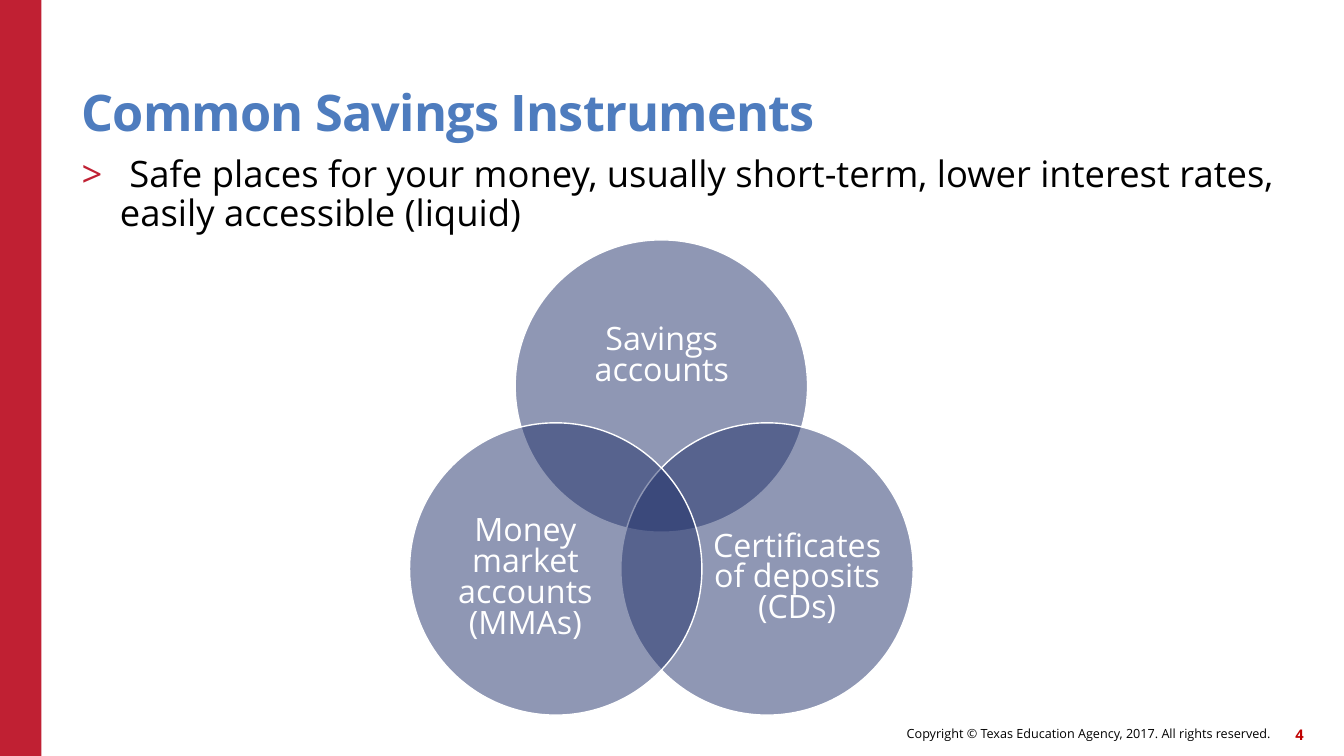
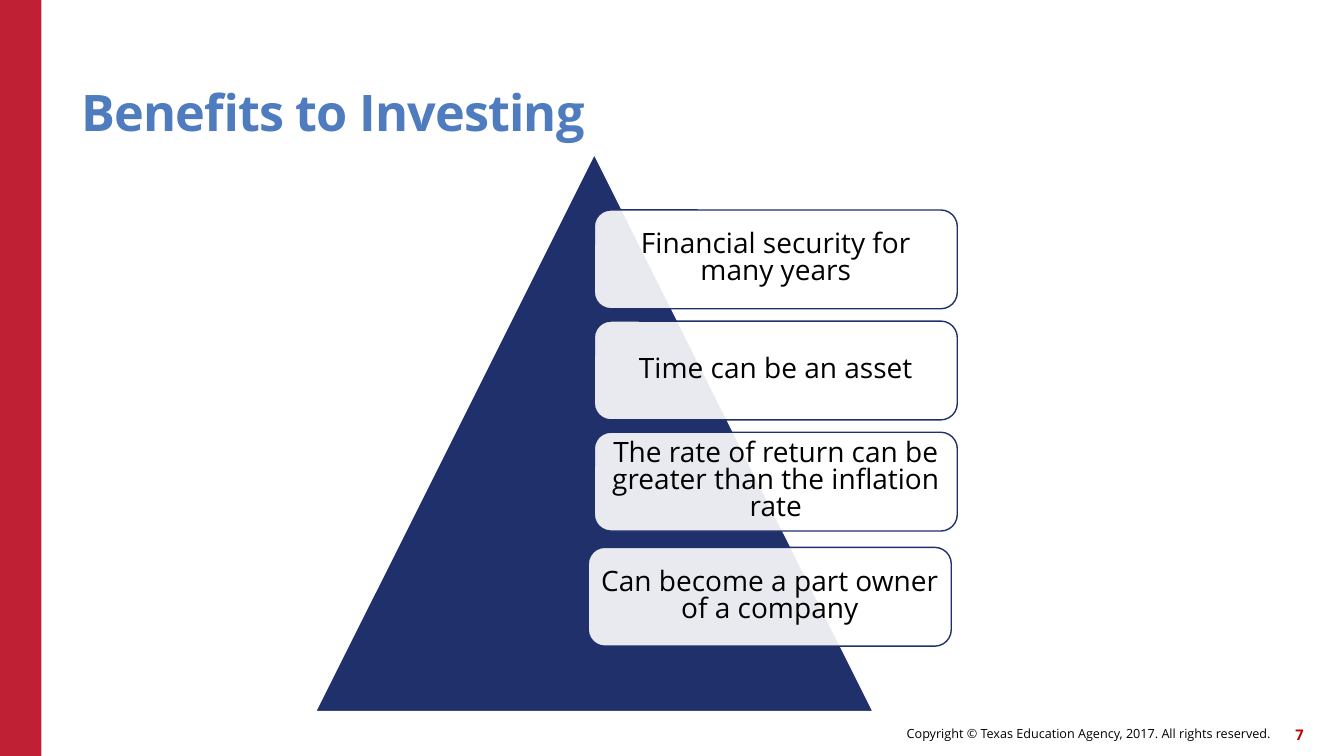
import math
from dataclasses import dataclass

import pptx
import pptx.util
import pptx.dml.color
import pptx.enum.shapes
import pptx.enum.text
import pptx.oxml.ns
from lxml import etree

Inch = pptx.util.Inches
Pt = pptx.util.Pt
Kind = pptx.enum.shapes.MSO_SHAPE
Align = pptx.enum.text.PP_ALIGN
Anchor = pptx.enum.text.MSO_ANCHOR


@dataclass(frozen=True)
class Theme:
    face: str = "Open Sans"
    red: str = "C02033"
    mark: str = "C00000"
    blue: str = "4E7CBE"
    navy: str = "20306A"
    white: str = "FFFFFF"
    black: str = "000000"
    head: float = 36
    body: float = 26
    ring: float = 23
    card: float = 20
    foot: float = 9
    num: float = 10.5
    tight: float = 0.8
    snug: float = 0.9


T = Theme()
WIDE, HIGH = 13.33, 7.5
LEFT = 0.81
NOTE = "Copyright © Texas Education Agency, 2017. All rights reserved."

SAVE = {
    "title": "Common Savings Instruments",
    "num": "4",
    "lead": " Safe places for your money, usually short-term, lower interest rates, easily accessible (liquid)",
    "rings": [
        ("Savings accounts", -90, (0.39, 0.51, 2.13, 1.3)),
        ("Certificates of deposits (CDs)", 30, (0.88, 0.75, 1.74, 1.59)),
        ("Money market accounts (MMAs)", 150, (0.28, 0.75, 1.74, 1.59)),
    ],
}
GAIN = {
    "title": "Benefits to Investing",
    "num": "7",
    "cards": [
        ("Financial security for many years", 0, 0),
        ("Time can be an asset", 0, 0),
        ("The rate of return can be greater than the inflation rate", 0, 0),
        ("Can become a part owner of a company", -0.06, 0.04),
    ],
}


def rgb(hue):
    return pptx.dml.color.RGBColor.from_string(hue)


def add(node, tag, **attrs):
    return etree.SubElement(node, pptx.oxml.ns.qn(tag), attrs)


def shape(slide, kind, box, fill, line=None, alpha=None):
    item = slide.shapes.add_shape(kind, *map(Inch, box))
    item.shadow.inherit = False
    item.fill.solid()
    item.fill.fore_color.rgb = rgb(fill)
    if alpha:
        tint = item.fill._xPr.find(".//" + pptx.oxml.ns.qn("a:srgbClr"))
        add(tint, "a:alpha", val=str(alpha * 1000))
    if line:
        item.line.color.rgb = rgb(line)
        item.line.width = Pt(1)
    else:
        item.line.fill.background()
    return item


def write(item, text, size, hue=T.black, bold=False, align=Align.LEFT,
          anchor=Anchor.MIDDLE, space=1.0, pad=0, track=None, bullet=None):
    frame = item.text_frame
    frame.word_wrap = True
    frame.vertical_anchor = anchor
    frame.margin_left = frame.margin_right = Inch(pad)
    frame.margin_top = frame.margin_bottom = Inch(pad)
    para = frame.paragraphs[0]
    para.alignment = align
    para.line_spacing = space
    if bullet:
        props = para._p.get_or_add_pPr()
        dent = Inch(0.38)
        props.set("marL", str(dent))
        props.set("indent", str(-dent))
        add(add(props, "a:buClr"), "a:srgbClr", val=T.red)
        add(props, "a:buFont", typeface=T.face)
        add(props, "a:buChar", char=bullet)
    run = para.add_run()
    run.text = text
    font = run.font
    font.name, font.size, font.bold = T.face, Pt(size), bold
    font.color.rgb = rgb(hue)
    if track:
        run._r.get_or_add_rPr().set("spc", str(round(track * 100)))


def label(slide, box, text, size, **form):
    write(slide.shapes.add_textbox(*map(Inch, box)), text, size, **form)


def start(deck, data):
    slide = deck.slides.add_slide(deck.slide_layouts[6])
    shape(slide, Kind.RECTANGLE, (0, 0, 0.41, HIGH), T.red)
    label(slide, (6.14, 7.12, 6.46, 0.32), NOTE, T.foot, align=Align.RIGHT)
    label(slide, (12.51, 7.13, 0.42, 0.32), data["num"], T.num,
          hue=T.mark, bold=True, align=Align.RIGHT)
    label(slide, (LEFT, 0.45, 11, 0.96), data["title"], T.head, hue=T.blue,
          bold=True, anchor=Anchor.BOTTOM, space=T.snug, track=-0.6)
    return slide


def venn(slide, data):
    label(slide, (LEFT, 1.55, 12.09, 5.18), data["lead"], T.body,
          anchor=Anchor.TOP, space=T.snug, bullet=">")
    size, reach, mid, base = 2.9, 1.21, 6.56, 5.04
    for text, turn, (dx, dy, wide, high) in data["rings"]:
        angle = math.radians(turn)
        left = mid + reach * math.cos(angle) - size / 2
        top = base + reach * math.sin(angle) - size / 2
        shape(slide, Kind.OVAL, (left, top, size, size), T.navy, T.white, 50)
        label(slide, (left + dx, top + dy, wide, high), text, T.ring,
              hue=T.white, align=Align.CENTER, space=T.tight)


def peak(slide, data):
    size, left, top = 5.53, 3.13, 1.53
    shape(slide, Kind.ISOSCELES_TRIANGLE, (left, top, size, size), T.navy, T.white)
    wide, high = 3.6, 0.98
    step = high * 9 / 8
    for row, (text, dx, dy) in enumerate(data["cards"]):
        box = (left + size / 2 + dx, top + size / 10 + row * step + dy, wide, high)
        card = shape(slide, Kind.ROUNDED_RECTANGLE, box, T.white, T.navy, 90)
        write(card, text, T.card, align=Align.CENTER, space=T.tight, pad=0.08)


def main():
    deck = pptx.Presentation()
    deck.slide_width, deck.slide_height = Inch(WIDE), Inch(HIGH)
    for data, draw in ((SAVE, venn), (GAIN, peak)):
        draw(start(deck, data), data)
    deck.save("out.pptx")


if __name__ == "__main__":
    main()
